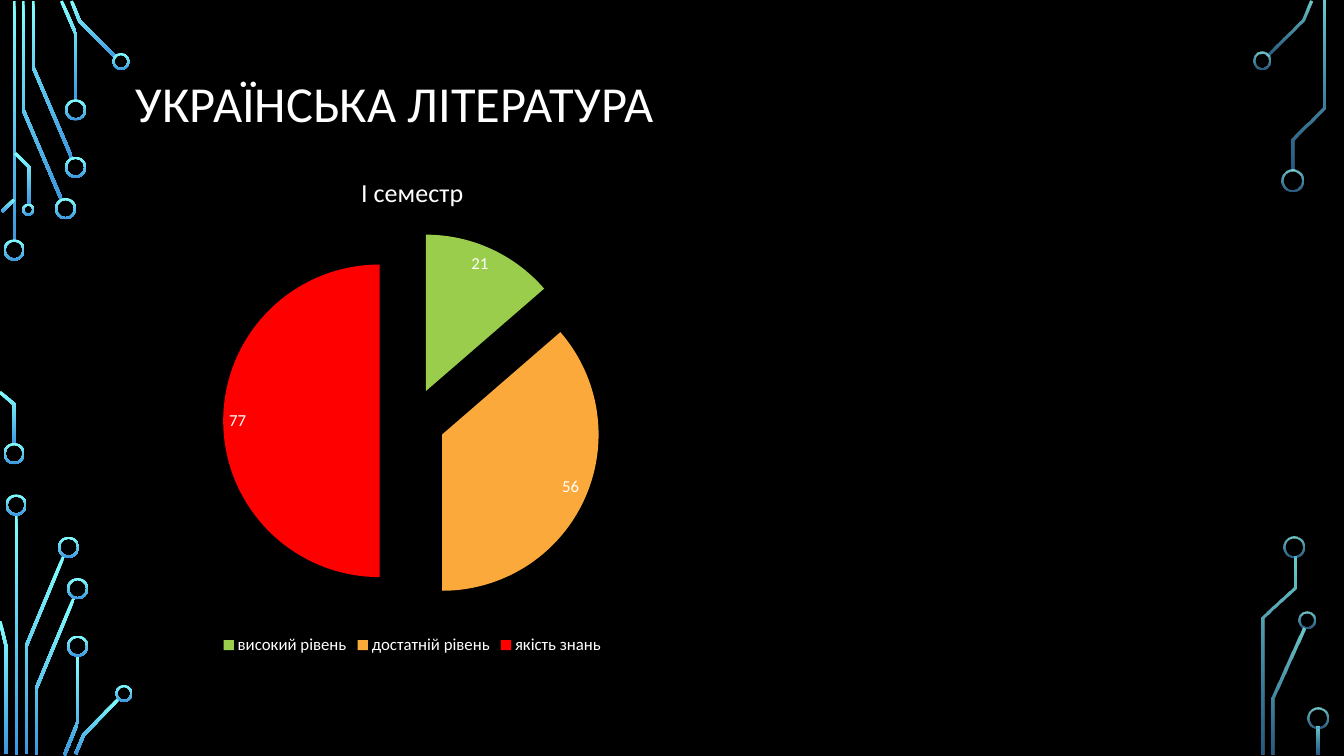
from math import hypot

from pptx import Presentation
from pptx.chart.data import CategoryChartData
from pptx.dml.color import RGBColor
from pptx.enum.chart import XL_CHART_TYPE, XL_LABEL_POSITION, XL_LEGEND_POSITION
from pptx.enum.shapes import MSO_SHAPE
from pptx.enum.text import MSO_ANCHOR
from pptx.oxml.ns import qn
from pptx.util import Inches, Pt

FONT = "Calibri"
BLACK = RGBColor(0x00, 0x00, 0x00)
WHITE = RGBColor(0xFF, 0xFF, 0xFF)
CYAN = RGBColor(0x82, 0xFF, 0xFF)
BLUE = RGBColor(0x3D, 0x97, 0xDE)
GREEN = RGBColor(0x9A, 0xCD, 0x4C)
ORANGE = RGBColor(0xFA, 0xA9, 0x3A)
RED = RGBColor(0xFF, 0x00, 0x00)

TITLE = "УКРАЇНСЬКА ЛІТЕРАТУРА"
SEMESTER = "І семестр"
LEVELS = [
    ("високий рівень", 21, GREEN),
    ("достатній рівень", 56, ORANGE),
    ("якість знань", 77, RED),
]
EXPLOSION = 21

TRACE_WIDTH = 0.03
RING_WIDTH = 0.02

# Circuit traces as centre lines; rings as centre x, centre y, diameter.
LEFT_TRACES = [
    [(0.14, 0.01), (0.14, 2.4)],
    [(0.23, 0.01), (0.23, 1.09), (0.61, 1.98)],
    [(0.33, 0.01), (0.33, 0.67), (0.71, 1.56)],
    [(0.61, 0.01), (0.75, 0.33), (0.75, 1)],
    [(0.71, 0.01), (0.79, 0.21), (1.15, 0.57)],
    [(0.02, 2.1), (0.14, 1.98)],
    [(0, 3.89), (0.14, 4.01), (0.14, 4.41)],
    [(0.15, 1.52), (0.29, 1.66), (0.29, 2.03)],
    [(0.16, 5.1), (0.16, 7.49)],
    [(0.63, 5.52), (0.26, 6.41), (0.26, 7.48)],
    [(0, 6.16), (0.06, 6.41), (0.06, 7.48)],
    [(0.73, 5.94), (0.36, 6.83), (0.36, 7.49)],
    [(0.77, 6.5), (0.77, 7.17), (0.64, 7.49)],
    [(1.18, 6.93), (0.83, 7.29), (0.75, 7.48)],
]
LEFT_RINGS = [
    (0.14, 2.48, 0.21), (0.14, 4.5, 0.21), (0.65, 2.07, 0.21),
    (0.75, 1.66, 0.21), (0.75, 1.09, 0.21), (1.2, 0.61, 0.17),
    (0.28, 2.08, 0.12), (0.16, 5.01, 0.21), (0.68, 5.43, 0.21),
    (0.77, 5.84, 0.21), (0.77, 6.41, 0.21), (1.23, 6.88, 0.17),
]
RIGHT_TRACES = [
    [(12.57, 0.55), (12.92, 0.2), (13, 0.01)],
    [(12.82, 1.69), (12.82, 1.38), (13.13, 1.07), (13.13, 0.01)],
    [(12.93, 6.23), (12.63, 6.93), (12.63, 7.49)],
    [(12.84, 5.52), (12.84, 5.83), (12.53, 6.13), (12.53, 7.49)],
    [(13.07, 7.21), (13.07, 7.49)],
]
RIGHT_RINGS = [
    (12.52, 0.6, 0.17), (12.82, 1.79, 0.21), (12.96, 6.15, 0.17),
    (12.83, 5.43, 0.21), (13.07, 7.12, 0.21),
]
CIRCUITS = [
    (LEFT_TRACES, LEFT_RINGS, (100, 100)),
    (RIGHT_TRACES, RIGHT_RINGS, (80, 60)),
]


def unit_normal(start, end):
    dx, dy = end[0] - start[0], end[1] - start[1]
    length = hypot(dx, dy)
    return -dy / length, dx / length


def trace_outline(points):
    """Widen a centre line to a band with mitred corners."""
    normals = [unit_normal(a, b) for a, b in zip(points, points[1:])]
    sides = [], []
    for (x, y), (ax, ay), (bx, by) in zip(
        points, normals[:1] + normals, normals + normals[-1:]
    ):
        reach = TRACE_WIDTH / 2 / (1 + ax * bx + ay * by)
        dx, dy = (ax + bx) * reach, (ay + by) * reach
        sides[0].append((Inches(x + dx), Inches(y + dy)))
        sides[1].append((Inches(x - dx), Inches(y - dy)))
    return sides[0] + sides[1][::-1]


def paint_glow(shape, opacities):
    """Fill from cyan at the top to blue at the bottom."""
    shape.shadow.inherit = False
    shape.line.fill.background()
    shape.fill.gradient()
    shape.fill.gradient_angle = 270
    for stop, color in zip(shape.fill.gradient_stops, (CYAN, BLUE)):
        stop.color.rgb = color
    for color, opacity in zip(shape.element.spPr.iter(qn("a:srgbClr")), opacities):
        if opacity < 100:
            alpha = color.makeelement(qn("a:alpha"), {"val": str(opacity * 1000)})
            color.append(alpha)


def add_circuit(slide, traces, rings, opacities):
    for points in traces:
        outline = trace_outline(points)
        builder = slide.shapes.build_freeform(*outline[0], scale=1)
        builder.add_line_segments(outline[1:], close=True)
        paint_glow(builder.convert_to_shape(), opacities)
    for x, y, size in rings:
        ring = slide.shapes.add_shape(
            MSO_SHAPE.DONUT, Inches(x - size / 2), Inches(y - size / 2),
            Inches(size), Inches(size),
        )
        ring.adjustments[0] = RING_WIDTH / size
        paint_glow(ring, opacities)


def style_font(font, size):
    font.name = FONT
    font.size = Pt(size)
    font.color.rgb = WHITE


def add_title(slide):
    box = slide.shapes.add_textbox(
        Inches(1.25), Inches(0.24), Inches(10.83), Inches(1.62)
    )
    frame = box.text_frame
    frame.word_wrap = True
    frame.vertical_anchor = MSO_ANCHOR.MIDDLE
    para = frame.paragraphs[0]
    para.line_spacing = 0.9
    span = para.add_run()
    span.text = TITLE
    style_font(span.font, 36)


def add_level_pie(slide):
    data = CategoryChartData()
    data.categories = [name for name, _, _ in LEVELS]
    data.add_series(SEMESTER, [value for _, value, _ in LEVELS])
    chart = slide.shapes.add_chart(
        XL_CHART_TYPE.PIE, Inches(0.52), Inches(1.53), Inches(7.14), Inches(5.01), data
    ).chart
    style_font(chart.font, 10)

    chart.has_title = True
    span = chart.chart_title.text_frame.paragraphs[0].add_run()
    span.text = SEMESTER
    style_font(span.font, 18.6)
    span.font.bold = False
    chart.chart_title.include_in_layout = False

    chart.has_legend = True
    chart.legend.position = XL_LEGEND_POSITION.BOTTOM
    chart.legend.include_in_layout = False
    style_font(chart.legend.font, 12)

    plot = chart.plots[0]
    plot.vary_by_categories = True
    series = plot.series[0]
    for index, (_, _, color) in enumerate(LEVELS):
        slice_format = series.points[index].format
        slice_format.fill.solid()
        slice_format.fill.fore_color.rgb = color
        slice_format.line.fill.background()
    root = series._element
    explosion = root.makeelement(qn("c:explosion"), {"val": str(EXPLOSION)})
    root.find(qn("c:dPt")).addprevious(explosion)

    labels = series.data_labels
    labels.show_value = True
    labels.position = XL_LABEL_POSITION.INSIDE_END
    style_font(labels.font, 12)


def main():
    deck = Presentation()
    deck.slide_width, deck.slide_height = Inches(13.33), Inches(7.5)
    page = deck.slides.add_slide(deck.slide_layouts[6])
    page.background.fill.solid()
    page.background.fill.fore_color.rgb = BLACK
    for traces, rings, opacities in CIRCUITS:
        add_circuit(page, traces, rings, opacities)
    add_title(page)
    add_level_pie(page)
    deck.save("out.pptx")


if __name__ == "__main__":
    main()
